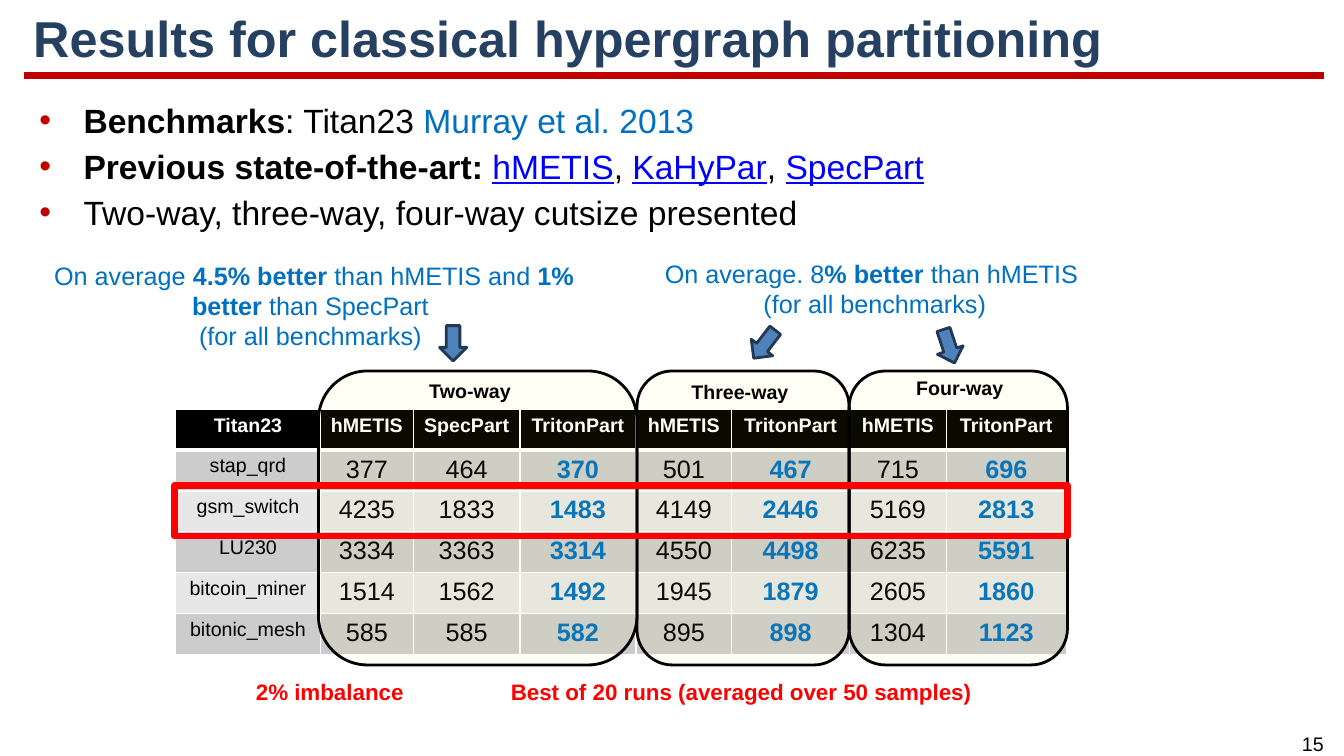
from dataclasses import dataclass
from itertools import pairwise

from lxml.etree import SubElement
from pptx import Presentation
from pptx.dml.color import RGBColor
from pptx.enum.shapes import MSO_CONNECTOR as Connector, MSO_SHAPE as Shape
from pptx.enum.text import MSO_ANCHOR as Anchor, PP_ALIGN as Align
from pptx.oxml.ns import qn
from pptx.util import Pt


@dataclass(frozen=True)
class Theme:
    font: str = "Arial"
    black: str = "000000"
    white: str = "FFFFFF"
    navy: str = "254061"
    rule: str = "C00000"
    blue: str = "0070C0"
    link: str = "0000FF"
    red: str = "FF0000"
    tint: str = "FFFF00"
    arrow: str = "4F81BD"
    arrow_edge: str = "233953"
    bands: tuple = ("CCCCCC", "E7E7E7")
    title: int = 36
    body: int = 24
    callout: int = 18
    note: int = 16
    label: int = 14


class Deck:
    def __init__(self, theme, width, height):
        self.theme = theme
        self.file = Presentation()
        self.file.slide_width, self.file.slide_height = Pt(width), Pt(height)
        self.shapes = self.file.slides.add_slide(self.file.slide_layouts[6]).shapes

    def style(self, font, size, color, bold=False, underline=False):
        font.name, font.size = self.theme.font, Pt(size)
        font.bold, font.underline = bold, underline
        font.color.rgb = RGBColor.from_string(color)

    def text(self, box, paragraphs, size, align=Align.LEFT, anchor=Anchor.TOP,
             spacing=None, bullets=False):
        frame = self.shapes.add_textbox(*map(Pt, box)).text_frame
        frame.word_wrap = True
        frame.vertical_anchor = anchor
        for index, runs in enumerate(paragraphs):
            paragraph = frame.add_paragraph() if index else frame.paragraphs[0]
            paragraph.alignment = align
            paragraph.line_spacing = spacing
            if bullets:
                paragraph.space_before = Pt(8.4 if index else 0)
                self.bullet(paragraph)
            for words, *look in runs:
                if words == "\n":
                    paragraph.add_line_break()
                    continue
                run = paragraph.add_run()
                run.text = words
                self.style(run.font, size, *look)

    def bullet(self, paragraph):
        props = paragraph._p.get_or_add_pPr()
        props.set("marL", str(Pt(36)))
        props.set("indent", str(Pt(-31.5)))
        color = SubElement(props, qn("a:buClr"))
        SubElement(color, qn("a:srgbClr"), val=self.theme.rule)
        SubElement(props, qn("a:buFont"), typeface=self.theme.font)
        SubElement(props, qn("a:buChar"), char="•")

    def line(self, start, end, color, weight):
        rule = self.shapes.add_connector(Connector.STRAIGHT, *map(Pt, start + end))
        rule.line.color.rgb = RGBColor.from_string(color)
        rule.line.width = Pt(weight)
        SubElement(rule._element.spPr, qn("a:effectLst"))

    def shape(self, kind, box, edge, weight, fill=None, opacity=100, turn=0):
        item = self.shapes.add_shape(kind, *map(Pt, box))
        item.shadow.inherit = False
        item.rotation = turn
        item.line.color.rgb = RGBColor.from_string(edge)
        item.line.width = Pt(weight)
        if fill is None:
            item.fill.background()
            return
        item.fill.solid()
        item.fill.fore_color.rgb = RGBColor.from_string(fill)
        if opacity < 100:
            color = item._element.spPr.find(qn("a:solidFill"))[0]
            SubElement(color, qn("a:alpha"), val=str(opacity * 1000))

    def table(self, left, top, widths, row_height, rows, highlighted):
        theme = self.theme
        grid = self.shapes.add_table(len(rows), len(widths), Pt(left), Pt(top),
                                     Pt(sum(widths)), Pt(row_height * len(rows))).table
        grid.horz_banding = False
        for column, width in zip(grid.columns, widths):
            column.width = Pt(width)
        for r, values in enumerate(rows):
            grid.rows[r].height = Pt(row_height)
            for c, value in enumerate(values):
                cell = grid.cell(r, c)
                self.borders(cell, top=3 if r == 1 else 1, bottom=1 if r else 3)
                cell.fill.solid()
                fill = theme.bands[(r - 1) % 2] if r else theme.black
                cell.fill.fore_color.rgb = RGBColor.from_string(fill)
                cell.text_frame.text = value
                paragraph = cell.text_frame.paragraphs[0]
                paragraph.alignment = Align.CENTER
                if r == 0:
                    look = theme.label, theme.white, True
                elif c == 0:
                    look = theme.label, theme.black
                elif c in highlighted:
                    look = theme.callout, theme.blue, True
                else:
                    look = theme.callout, theme.black
                self.style(paragraph.runs[0].font, *look)

    def borders(self, cell, top, bottom):
        props = cell._tc.get_or_add_tcPr()
        for side, weight in zip("LRTB", (1, 1, top, bottom)):
            edge = SubElement(props, qn(f"a:ln{side}"), w=str(Pt(weight)))
            fill = SubElement(edge, qn("a:solidFill"))
            SubElement(fill, qn("a:srgbClr"), val=self.theme.white)


def main():
    theme = Theme()
    deck = Deck(theme, 960, 540)
    black, blue, link = theme.black, theme.blue, theme.link

    deck.line((17.3, 54), (946, 54), theme.rule, 4.5)
    deck.text((916.5, 519, 42.5, 24.5), [[("15", black)]], theme.label, Align.CENTER)
    deck.text((16.6, 72, 695, 154), [
        [("Benchmarks", black, True), (": Titan23 ", black), ("Murray et al. 2013", blue)],
        [("Previous state-of-the-art: ", black, True), ("hMETIS", link, False, True),
         (", ", black), ("KaHyPar", link, False, True),
         (", ", black), ("SpecPart", link, False, True)],
        [("Two-way, three-way, four-way cutsize presented", black)],
    ], theme.body, spacing=0.85, bullets=True)
    deck.text((16.6, 5.8, 859, 46.8),
              [[("Results for classical hypergraph partitioning", theme.navy, True)]],
              theme.title, anchor=Anchor.MIDDLE, spacing=0.9)

    results = [line.split() for line in (
        "Titan23 hMETIS SpecPart TritonPart hMETIS TritonPart hMETIS TritonPart",
        "stap_qrd 377 464 370 501 467 715 696",
        "gsm_switch 4235 1833 1483 4149 2446 5169 2813",
        "LU230 3334 3363 3314 4550 4498 6235 5591",
        "bitcoin_miner 1514 1562 1492 1945 1879 2605 1860",
        "bitonic_mesh 585 585 582 895 898 1304 1123",
    )]
    deck.table(125.3, 292.3, (103.7, 66.2, 76.3, 82.8, 68.4, 84.2, 69.1, 85.7),
               29.2, results, highlighted=(3, 5, 7))

    for left, right in pairwise((227.5, 455, 606.5, 762.5)):
        deck.shape(Shape.ROUNDED_RECTANGLE, (left, 265, right - left, 210),
                   black, 2, theme.tint, opacity=4)
    for way, left, top in (("Two-way", 299.5, 267.1), ("Three-way", 486.7, 267.8),
                           ("Four-way", 647.3, 265)):
        deck.text((left, top, 192, 24.5), [[(way, black, True)]], theme.label)
    for note, left, width in (("2% imbalance", 175.7, 165.6),
                              ("Best of 20 runs (averaged over 50 samples)", 357.8, 465)):
        deck.text((left, 481, width, 26.6), [[(note, theme.red, True)]], theme.note)

    deck.text((19.4, 182.2, 409.7, 94.3), [[
        ("On average ", blue), ("4.5% better ", blue, True), ("than hMETIS and ", blue),
        ("1% better ", blue, True), ("than SpecPart ", blue), ("\n",),
        ("(for all benchmarks) ", blue)]], theme.callout, Align.CENTER)
    deck.text((444.2, 180.7, 361.4, 51.1), [[
        ("On average. 8", blue), ("% better ", blue, True), ("than hMETIS ", blue), ("\n",),
        ("(for all benchmarks)", blue)]], theme.callout, Align.CENTER)
    for left, top, turn in ((314, 232.6, 0), (536.4, 233.3, 37.5), (668.2, 234.7, 341.7)):
        deck.shape(Shape.DOWN_ARROW, (left, top, 19.4, 25.2),
                   theme.arrow_edge, 2, theme.arrow, turn=turn)
    deck.shape(Shape.RECTANGLE, (124.6, 347, 638, 36), theme.red, 4.75)

    deck.file.save("out.pptx")


if __name__ == "__main__":
    main()
